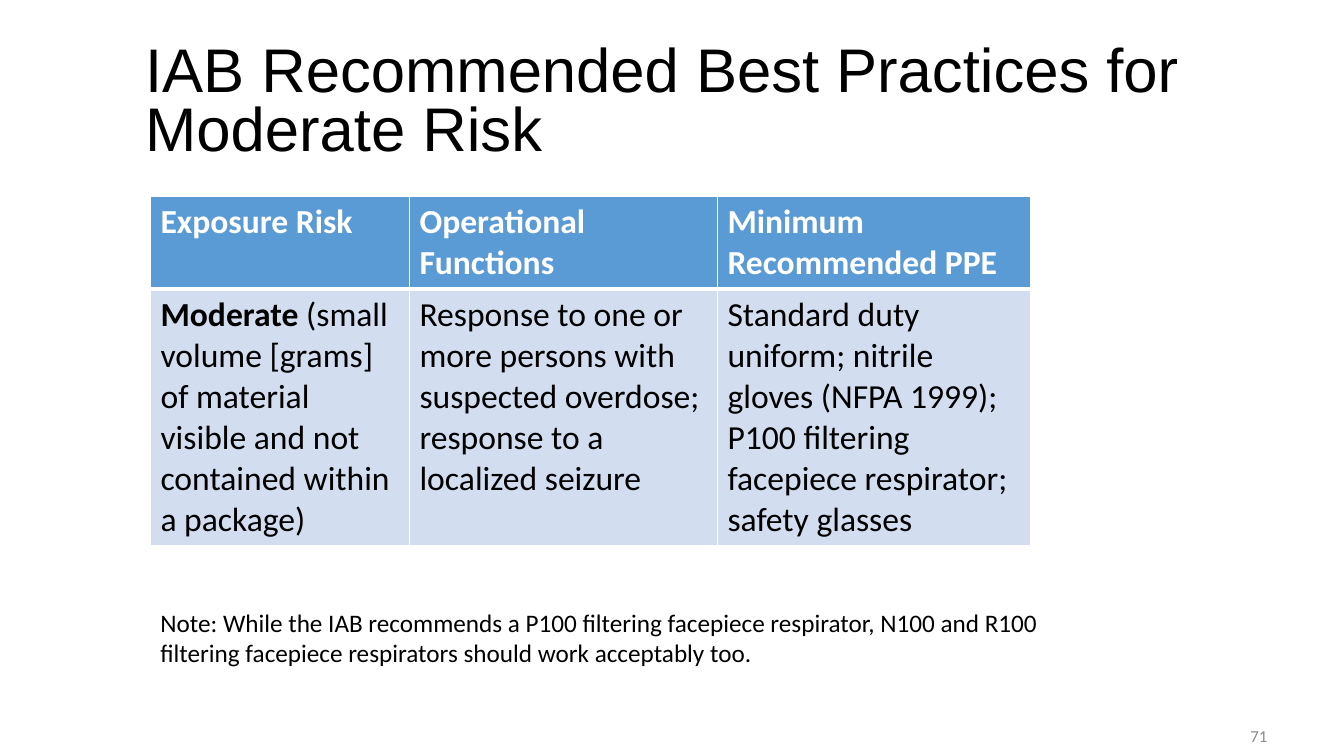
from lxml.etree import SubElement
from pptx import Presentation
from pptx.dml.color import RGBColor
from pptx.enum.text import MSO_ANCHOR as ANC, MSO_AUTO_SIZE as FIT, PP_ALIGN as AL
from pptx.oxml.ns import qn
from pptx.util import Pt

BLACK, WHITE, GREY = "000000", "FFFFFF", "8C8C8C"
BLUE, PALE = "5B9BD5", "D2DEEF"
COLS = [185, 220, 224]
HEAD = ["Exposure Risk", "Operational Functions", "Minimum Recommended PPE"]
BODY = [
    [[("Moderate", True), (" (small", False)],
     "volume [grams] of material visible and not contained within a package)"],
    ["Response to one or more persons with suspected overdose; "
     "response to a localized seizure"],
    ["Standard duty uniform; nitrile gloves (NFPA 1999); "
     "P100 filtering facepiece respirator; safety glasses"],
]
NOTE = ("Note: While the IAB recommends a P100 filtering facepiece respirator, "
        "N100 and R100 filtering facepiece respirators should work acceptably too.")


def rgb(color):
    return RGBColor.from_string(color)


def write(p, text, size=24, font="Calibri", color=BLACK, bold=False,
          align=AL.LEFT, spacing=None):
    p.alignment = align
    if spacing:
        p.line_spacing = spacing
    runs = [(text, bold)] if isinstance(text, str) else text
    for part, heavy in runs:
        r = p.add_run()
        r.text = part
        r.font.size, r.font.name, r.font.bold = Pt(size), font, heavy
        r.font.color.rgb = rgb(color)


def border(cell, **widths):
    tcPr = cell._tc.get_or_add_tcPr()
    for side in "LRTB":
        ln = SubElement(tcPr, qn(f"a:ln{side}"), w=str(Pt(widths.get(side, 1))))
        fill = SubElement(ln, qn("a:solidFill"))
        SubElement(fill, qn("a:srgbClr"), val=WHITE)


def paint(cell, color):
    cell.fill.solid()
    cell.fill.fore_color.rgb = rgb(color)


def add_title(s, x, y, w, h):
    sp = s.shapes.title
    sp.left, sp.top, sp.width, sp.height = Pt(x), Pt(y), Pt(w), Pt(h)
    tf = sp.text_frame
    tf.auto_size, tf.vertical_anchor = FIT.NONE, ANC.MIDDLE
    write(tf.paragraphs[0], "IAB Recommended Best Practices for Moderate Risk",
          size=44, font="Arial", spacing=0.8)


def add_risk_table(s, x, y, w, h, head_h=66):
    tbl = s.shapes.add_table(2, len(COLS), Pt(x), Pt(y), Pt(w), Pt(h)).table
    tbl.rows[0].height, tbl.rows[1].height = Pt(head_h), Pt(h - head_h)
    for i, (col_w, head, body) in enumerate(zip(COLS, HEAD, BODY)):
        tbl.columns[i].width = Pt(col_w)
        top, cell = tbl.cell(0, i), tbl.cell(1, i)
        border(top, B=3)
        paint(top, BLUE)
        write(top.text_frame.paragraphs[0], head, color=WHITE, bold=True)
        border(cell, T=3)
        paint(cell, PALE)
        tf = cell.text_frame
        for j, text in enumerate(body):
            write(tf.add_paragraph() if j else tf.paragraphs[0], text)


def add_text(s, x, y, w, h, text, anchor=ANC.TOP, **fmt):
    tf = s.shapes.add_textbox(Pt(x), Pt(y), Pt(w), Pt(h)).text_frame
    tf.word_wrap, tf.vertical_anchor = True, anchor
    write(tf.paragraphs[0], text, **fmt)


def main():
    prs = Presentation()
    prs.slide_width, prs.slide_height = Pt(960), Pt(540)
    s = prs.slides.add_slide(prs.slide_layouts[5])
    add_title(s, 96.5, 53.3, 766.8, 42.5)
    add_risk_table(s, 107.5, 140.5, sum(COLS), 249)
    add_text(s, 107.5, 430, 687.6, 51, NOTE, size=18)
    add_text(s, 688.3, 511.2, 224, 28.8, "71", anchor=ANC.MIDDLE,
             size=12, color=GREY, align=AL.RIGHT)
    prs.save("out.pptx")


if __name__ == "__main__":
    main()
